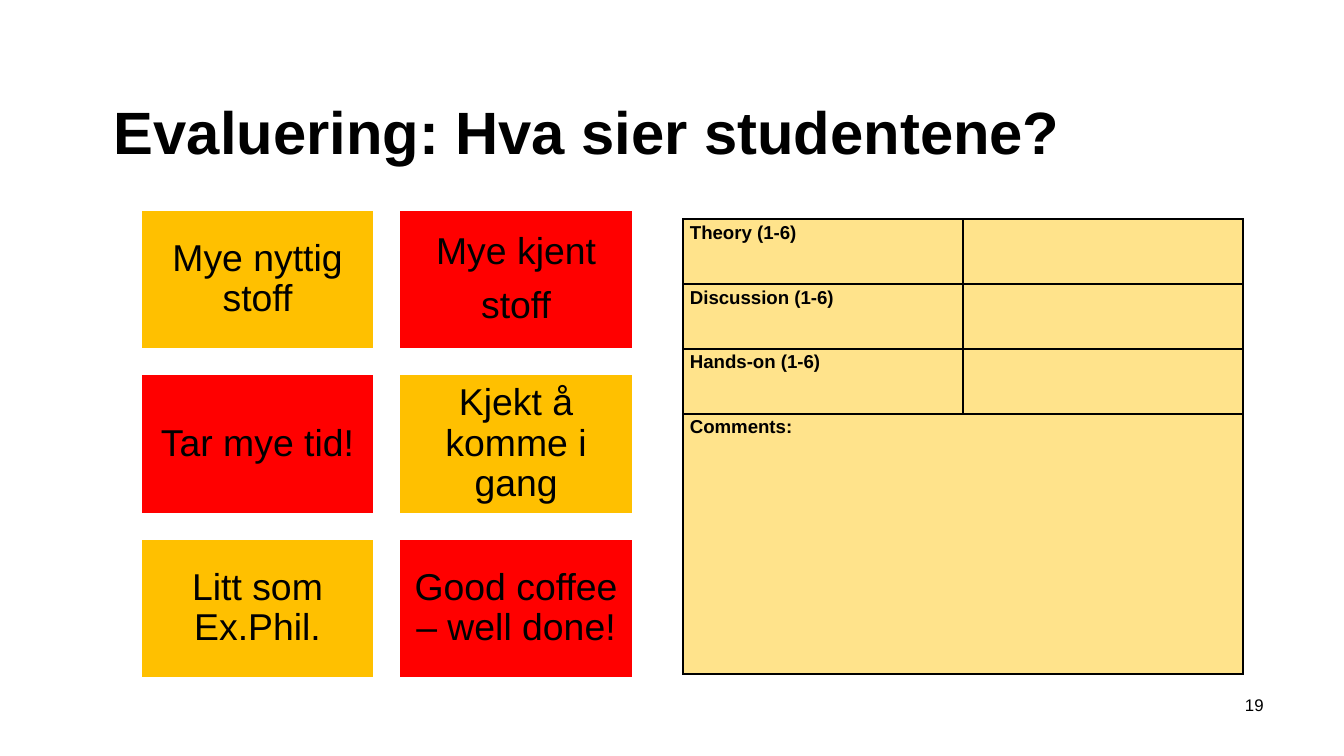
"""Build the course evaluation slide with student comments and a rating form."""
import pptx
import pptx.dml.color
import pptx.enum.shapes
import pptx.enum.text
import pptx.oxml
import pptx.oxml.ns
import pptx.util

Pt = pptx.util.Pt
ALIGN = pptx.enum.text.PP_ALIGN
MIDDLE = pptx.enum.text.MSO_ANCHOR.MIDDLE
COLORS = {"text": "000000", "amber": "FFC000", "red": "FF0000",
          "form": "FFE38B", "outline": "FFFFFF", "border": "000000"}


def rgb(name):
    return pptx.dml.color.RGBColor.from_string(COLORS[name])


def write(frame, lines, size, bold=False, align=ALIGN.LEFT, spacing=1.0, after=0):
    frame.word_wrap = True
    for index, line in enumerate(lines):
        paragraph = frame.paragraphs[0] if index == 0 else frame.add_paragraph()
        paragraph.text = line
        paragraph.alignment = align
        paragraph.line_spacing = spacing
        paragraph.space_after = Pt(after)
        paragraph.font.name = "Arial"
        paragraph.font.size = Pt(size)
        paragraph.font.bold = bold
        paragraph.font.color.rgb = rgb("text")


deck = pptx.Presentation()
deck.slide_width, deck.slide_height = Pt(720), Pt(405)
slide = deck.slides.add_slide(deck.slide_layouts[6])

title = slide.shapes.add_textbox(Pt(54), Pt(36), Pt(612), Pt(67.5))
title.text_frame.vertical_anchor = MIDDLE
write(title.text_frame, ["Evaluering: Hva sier studentene?"], 32, bold=True)

ratings = ["Theory (1-6)", "Discussion (1-6)", "Hands-on (1-6)", "Comments:"]
row_heights = [34.8, 34.8, 34.8, 139.4]
form = slide.shapes.add_table(4, 2, Pt(366), Pt(117.4), Pt(300), Pt(sum(row_heights))).table
for column in form.columns:
    column.width = Pt(150)
for row, height in zip(form.rows, row_heights):
    row.height = Pt(height)
form.cell(3, 0).merge(form.cell(3, 1))
for row_index, rating in enumerate(ratings):
    write(form.cell(row_index, 0).text_frame, [rating], 10, bold=True, spacing=1.15)
for cell in form.iter_cells():
    cell.margin_left = cell.margin_right = Pt(3.6)
    cell.margin_top = cell.margin_bottom = Pt(0)
    properties = cell._tc.get_or_add_tcPr()
    for side in ("lnL", "lnR", "lnT", "lnB"):
        properties.append(pptx.oxml.parse_xml(
            f'<a:{side} {pptx.oxml.ns.nsdecls("a")} w="{Pt(1)}"><a:solidFill>'
            f'<a:srgbClr val="{COLORS["border"]}"/></a:solidFill></a:{side}>'))
    cell.fill.solid()
    cell.fill.fore_color.rgb = rgb("form")

page_number = slide.shapes.add_textbox(Pt(630), Pt(368.6), Pt(54), Pt(27))
write(page_number.text_frame, ["19"], 9, align=ALIGN.RIGHT)

comments = [
    (["Mye nyttig stoff"], "amber"), (["Mye kjent", "stoff"], "red"),
    (["Tar mye tid!"], "red"), (["Kjekt å komme i gang"], "amber"),
    (["Litt som Ex.Phil."], "amber"), (["Good coffee – well done!"], "red"),
]
for index, (lines, color) in enumerate(comments):
    row_index, column_index = divmod(index, 2)
    card = slide.shapes.add_shape(
        pptx.enum.shapes.MSO_SHAPE.RECTANGLE,
        Pt(75 + 138.5 * column_index), Pt(111.8 + 88.2 * row_index), Pt(126), Pt(75.6))
    card.shadow.inherit = False
    card.fill.solid()
    card.fill.fore_color.rgb = rgb(color)
    card.line.color.rgb = rgb("outline")
    card.line.width = Pt(2)
    frame = card.text_frame
    frame.vertical_anchor = MIDDLE
    frame.margin_left = frame.margin_right = Pt(6)
    frame.margin_top = frame.margin_bottom = Pt(6)
    write(frame, lines, 20, align=ALIGN.CENTER, spacing=0.9, after=7)

deck.save("out.pptx")
